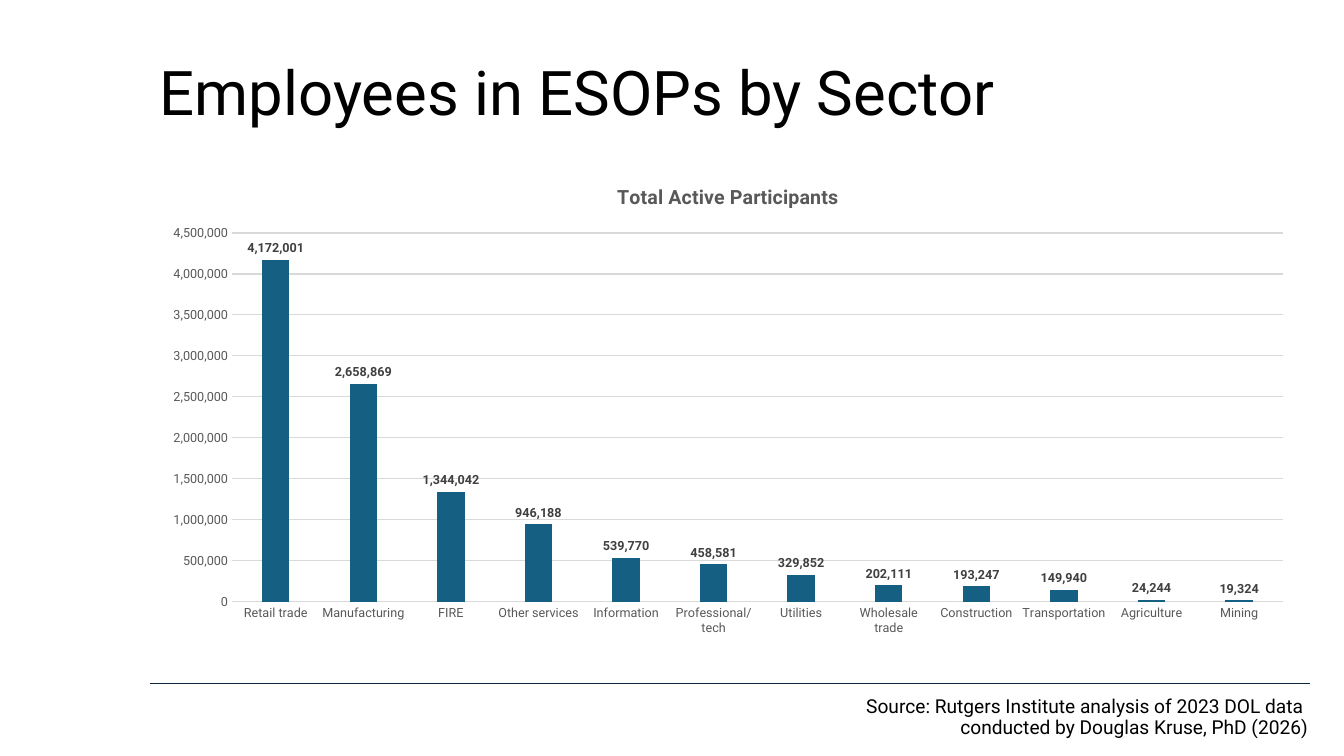
from lxml.etree import SubElement
from pptx import Presentation
from pptx.chart.data import CategoryChartData
from pptx.dml.color import RGBColor
from pptx.enum.chart import XL_CHART_TYPE, XL_LABEL_POSITION, XL_TICK_MARK
from pptx.enum.shapes import MSO_CONNECTOR
from pptx.enum.text import MSO_ANCHOR, PP_ALIGN
from pptx.oxml.ns import qn
from pptx.util import Pt

WIDE, HIGH = 1344, 756
SCALE = 12192000 / WIDE
FACE = "Roboto"
BLACK, GREY, PALE = "000000", "595959", "D9D9D9"
SECTORS = {
    "Retail trade": 4172001,
    "Manufacturing": 2658869,
    "FIRE": 1344042,
    "Other services": 946188,
    "Information": 539770,
    "Professional/tech": 458581,
    "Utilities": 329852,
    "Wholesale trade": 202111,
    "Construction": 193247,
    "Transportation": 149940,
    "Agriculture": 24244,
    "Mining": 19324,
}


def px(num):
    return round(num * SCALE)


def paint(color, code):
    color.rgb = RGBColor.from_string(code)


def assign(item, **values):
    for name, value in values.items():
        setattr(item, name, value)


def style(font, size, code, bold=False):
    assign(font, name=FACE, size=Pt(size), bold=bold)
    paint(font.color, code)


def stroke(line, code):
    paint(line.color, code)
    line.width = Pt(0.75)


def add_text(slide, box, lines, size, align):
    frame = slide.shapes.add_textbox(*map(px, box)).text_frame
    assign(frame, word_wrap=True, vertical_anchor=MSO_ANCHOR.MIDDLE)
    frame.text = "\n".join(lines)
    for para in frame.paragraphs:
        assign(para, alignment=align, line_spacing=0.9)
        style(para.runs[0].font, size, BLACK)


def add_rule(slide, left, top, width):
    ends = map(px, (left, top, left + width, top))
    rule = slide.shapes.add_connector(MSO_CONNECTOR.STRAIGHT, *ends)
    stroke(rule.line, "0E2841")
    SubElement(rule._element.spPr, qn("a:effectLst"))


def place_plot(chart, box, inner):
    """Fix the plot area at inner, given in px from the chart's corner."""
    area = chart._chartSpace.chart.plotArea
    for old in area.findall(qn("c:layout")):
        area.remove(old)
    layout = SubElement(area, qn("c:layout"))
    area.insert(0, layout)
    manual = SubElement(layout, qn("c:manualLayout"))
    rows = [("layoutTarget", "inner"), ("xMode", "edge"), ("yMode", "edge")]
    sizes = box[2:] * 2
    rows += [(key, f"{part / whole:.4f}")
             for key, part, whole in zip("xywh", inner, sizes)]
    for key, value in rows:
        SubElement(manual, qn(f"c:{key}")).set("val", value)


def add_bars(slide, box):
    data = CategoryChartData(number_format="#,##0")
    data.categories = list(SECTORS)
    data.add_series("Series 1", list(SECTORS.values()))
    chart = slide.shapes.add_chart(
        XL_CHART_TYPE.COLUMN_CLUSTERED, *map(px, box), data).chart
    style(chart.font, 10, BLACK)
    chart.has_legend = False

    # Chart title
    chart.has_title = True
    chart.chart_title.include_in_layout = False
    frame = chart.chart_title.text_frame
    frame.text = "Total Active Participants"
    style(frame.paragraphs[0].runs[0].font, 14, GREY, True)

    # Axes
    for axis in (chart.category_axis, chart.value_axis):
        assign(axis, major_tick_mark=XL_TICK_MARK.NONE,
               minor_tick_mark=XL_TICK_MARK.NONE)
        style(axis.tick_labels.font, 9, GREY)
    stroke(chart.category_axis.format.line, PALE)
    scale = chart.value_axis
    assign(scale, minimum_scale=0, maximum_scale=4500000,
           major_unit=500000, has_major_gridlines=True)
    scale.format.line.fill.background()
    stroke(scale.major_gridlines.format.line, PALE)
    assign(scale.tick_labels, number_format="#,##0",
           number_format_is_linked=False)

    # Columns and their labels
    plot = chart.plots[0]
    assign(plot, gap_width=219, overlap=-27, vary_by_categories=False,
           has_data_labels=True)
    fill = plot.series[0].format.fill
    fill.solid()
    paint(fill.fore_color, "156082")
    labels = plot.data_labels
    assign(labels, show_value=True, number_format="#,##0",
           number_format_is_linked=False,
           position=XL_LABEL_POSITION.OUTSIDE_END)
    style(labels.font, 9, "404040", True)
    place_plot(chart, box, (82, 68, 1051, 369))


def build_slide(deck, box):
    left, top, width, height = box
    slide = deck.slides.add_slide(deck.slide_layouts[6])
    add_rule(slide, left, top + 635, width)
    add_text(slide, (left, top, 1154, 94),
             ["Employees in ESOPs by Sector"], 44, PP_ALIGN.LEFT)
    add_text(slide, (left + 14, top + 622, 1154, 94),
             ["Source: Rutgers Institute analysis of 2023 DOL data ",
              "conducted by Douglas Kruse, PhD (2026)"],
             13.7, PP_ALIGN.RIGHT)
    add_bars(slide, (left, top + 116, 1156, 480))


def main():
    deck = Presentation()
    assign(deck, slide_width=px(WIDE), slide_height=px(HIGH))
    build_slide(deck, (150, 49, 1160, 707))
    deck.save("out.pptx")


if __name__ == "__main__":
    main()
